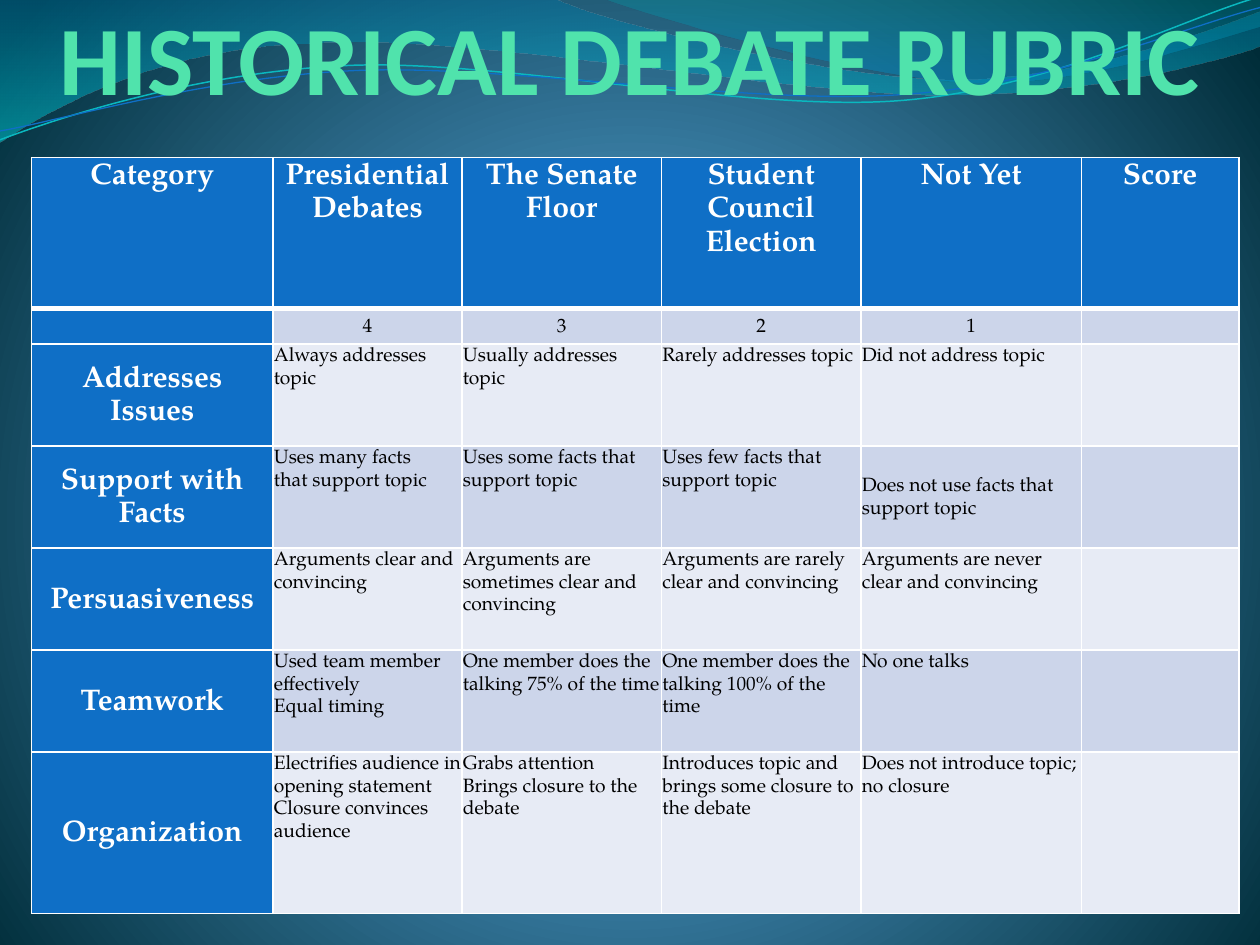
from copy import deepcopy

from lxml.etree import SubElement
from pptx import Presentation
from pptx.dml.color import RGBColor
from pptx.enum.text import MSO_ANCHOR, PP_ALIGN
from pptx.oxml import parse_xml
from pptx.oxml.ns import nsdecls, qn
from pptx.util import Inches, Pt

WHITE = RGBColor(0xFF, 0xFF, 0xFF)
BLACK = RGBColor(0x00, 0x00, 0x00)
BLUE = RGBColor(0x0F, 0x6F, 0xC6)
TEAL = RGBColor(0x0A, 0xB8, 0xBF)
MINT = RGBColor(0x50, 0xE3, 0xAC)
DARK_BAND = RGBColor(0xCC, 0xD5, 0xEA)
LIGHT_BAND = RGBColor(0xE7, 0xEB, 0xF5)

TITLE_FORMAT = {"name": "Calibri", "size": Pt(56), "bold": True}
HEADING_FORMAT = {"name": "TeX Gyre Pagella", "size": Pt(17), "bold": True}
BODY_FORMAT = {"name": "TeX Gyre Pagella", "size": Pt(11), "bold": False}

BACKGROUND_STOPS = [(0, "4AA0D6", 100), (25, "4C98C7", 100), (100, "002C38", 100)]
BACKGROUND_SHADE = (
    '<a:path path="circle"><a:fillToRect l="10000" t="110000" r="10000" b="100000"/></a:path>'
)
WAVE_SHADE = '<a:lin ang="5400000" scaled="1"/>'

WAVES = [
    (
        [(0, "0074A1", 45), (100, "00C6CF", 55)],
        (0, 0),
        [
            [(4.4, -0.01)],
            [(4.76, 0.17), (6.64, 0.63), (7.58, 0.63)],
            [(8.53, 0.63), (9.58, 0.26), (10, 0.09)],
            [(10.01, 0.36)],
            [(9.83, 0.44), (8.7, 0.76), (7.46, 0.75)],
            [(6.22, 0.75), (3.82, 0.28), (2.57, 0.34)],
            [(1.29, 0.36), (0.46, 0.83), (-0.01, 1.13)],
        ],
    ),
    (
        [(0, "00A1A9", 30), (80, "008BBF", 45)],
        (4.79, -0.01),
        [
            [(5.09, 0.11), (6.82, 0.62), (7.69, 0.65)],
            [(8.56, 0.69), (9.61, 0.32), (10, 0.21)],
            [(10, 0)],
        ],
    ),
]
STRANDS = [
    (
        TEAL,
        0.85,
        (0, 1.11),
        [
            [(0.48, 0.93), (1.58, 0.57), (2.77, 0.52)],
            [(3.95, 0.47), (5.93, 0.89), (7.13, 0.8)],
            [(8.33, 0.71), (9.38, 0.15), (9.98, -0.02)],
        ],
    ),
    (
        BLUE,
        0.75,
        (0, 1.04),
        [
            [(0.47, 0.96), (1.64, 0.61), (2.83, 0.56)],
            [(4.03, 0.51), (5.97, 0.84), (7.17, 0.75)],
            [(8.36, 0.67), (9.41, 0.21), (10, 0.06)],
        ],
    ),
]

COLUMN_TWELFTHS = [23, 18, 19, 19, 21, 15]
ROW_HEIGHTS = [1.2, 0.28, 0.81, 0.81, 0.81, 0.81, 1.28]
RUBRIC = [
    ["Category", "Presidential Debates", "The Senate Floor", "Student Council Election", "Not Yet", "Score"],
    ["", "4", "3", "2", "1", ""],
    ["Addresses\vIssues", "Always addresses \vtopic", "Usually addresses topic",
     "Rarely addresses topic", "Did not address topic", ""],
    ["Support with Facts", "Uses many facts\vthat support topic", "Uses some facts that support topic",
     "Uses few facts that support topic", "Does not use facts that support topic", ""],
    ["Persuasiveness", "Arguments clear and convincing", "Arguments are sometimes clear and convincing",
     "Arguments are rarely clear and convincing", "Arguments are never clear and convincing", ""],
    ["Teamwork", "Used team member effectively\nEqual timing", "One member does the talking 75% of the time",
     "One member does the talking 100% of the time", "No one talks", ""],
    ["Organization", "Electrifies audience in opening statement\vClosure convinces audience",
     "Grabs attention\nBrings closure to the debate",
     "Introduces topic and brings some closure to the debate",
     "Does not introduce topic; no closure", ""],
]
CENTERED_BODY_CELL = (3, 4)


def gradient(stops, shade):
    stop_xml = "".join(
        f'<a:gs pos="{position * 1000}"><a:srgbClr val="{color}">'
        f'<a:alpha val="{opacity * 1000}"/></a:srgbClr></a:gs>'
        for position, color, opacity in stops
    )
    return parse_xml(f'<a:gradFill {nsdecls("a")} rotWithShape="1"><a:gsLst>{stop_xml}</a:gsLst>{shade}</a:gradFill>')


def replace_gradient(parent, stops, shade):
    old = parent.find(qn("a:gradFill"))
    parent.replace(old, gradient(stops, shade))


def paint_background(slide):
    slide.background.fill.gradient()
    properties = next(slide.element.iter(qn("p:bgPr")))
    replace_gradient(properties, BACKGROUND_STOPS, BACKGROUND_SHADE)


def add_outline(slide, start, segments, close):
    builder = slide.shapes.build_freeform(Inches(start[0]), Inches(start[1]))
    ends = [(Inches(x), Inches(y)) for x, y in (segment[-1] for segment in segments)]
    builder.add_line_segments(ends, close=close)
    shape = builder.convert_to_shape()
    shape.shadow.inherit = False
    lines = list(shape.element.iter(qn("a:lnTo")))
    for line, segment in zip(lines, segments):
        if len(segment) == 3:
            curve = SubElement(line.getparent(), qn("a:cubicBezTo"))
            for x, y in segment:
                SubElement(curve, qn("a:pt"), x=str(Inches(x) - shape.left), y=str(Inches(y) - shape.top))
            line.getparent().replace(line, curve)
    return shape


def add_wave(slide, stops, start, segments):
    shape = add_outline(slide, start, segments, True)
    shape.line.fill.background()
    shape.fill.gradient()
    replace_gradient(shape.element.spPr, stops, WAVE_SHADE)


def add_strand(slide, color, width, start, segments):
    shape = add_outline(slide, start, segments, False)
    shape.fill.background()
    shape.line.color.rgb = color
    shape.line.width = Pt(width)


def format_run(run, formats, color):
    for name, value in formats.items():
        setattr(run.font, name, value)
    run.font.color.rgb = color


def add_title(slide):
    box = slide.shapes.add_textbox(0, 0, Inches(10), Inches(0.91))
    frame = box.text_frame
    frame_format = {"word_wrap": True, "vertical_anchor": MSO_ANCHOR.BOTTOM}
    frame_format.update({f"margin_{side}": 0 for side in ("left", "top", "right", "bottom")})
    for name, value in frame_format.items():
        setattr(frame, name, value)
    paragraph = frame.paragraphs[0]
    paragraph.alignment = PP_ALIGN.CENTER
    run = paragraph.add_run()
    run.text = "HISTORICAL DEBATE RUBRIC"
    format_run(run, TITLE_FORMAT, MINT)


def set_borders(cell, row):
    widths = {"L": 1, "R": 1, "T": 3 if row == 1 else 1, "B": 3 if row == 0 else 1}
    properties = cell._tc.get_or_add_tcPr()
    for side, width in widths.items():
        properties.append(parse_xml(
            f'<a:ln{side} {nsdecls("a")} w="{Pt(width)}"><a:solidFill>'
            f'<a:srgbClr val="{WHITE}"/></a:solidFill></a:ln{side}>'
        ))


def fill_cell(cell, text, row, column):
    heading = row == 0 or column == 0
    centered = heading or row == 1
    middle = row > 0 and (centered or (row, column) == CENTERED_BODY_CELL)
    set_borders(cell, row)
    cell.fill.solid()
    cell.fill.fore_color.rgb = BLUE if heading else DARK_BAND if row % 2 else LIGHT_BAND
    cell.vertical_anchor = MSO_ANCHOR.MIDDLE if middle else MSO_ANCHOR.TOP
    for side in ("left", "top", "right", "bottom"):
        setattr(cell, f"margin_{side}", Pt(0.5))
    cell.text_frame.text = text
    for index, paragraph in enumerate(cell.text_frame.paragraphs):
        paragraph.alignment = PP_ALIGN.CENTER if centered else PP_ALIGN.LEFT
        if not text:
            SubElement(paragraph._p, qn("a:endParaRPr"), sz="1100")
            continue
        spaced = heading or index > 0 or (row == 1 and column > 1)
        paragraph.line_spacing = 1.15
        paragraph.space_after = Pt(10 if spaced else 0)
        for run in paragraph.runs:
            format_run(run, HEADING_FORMAT if heading else BODY_FORMAT, WHITE if heading else BLACK)
        for line_break in paragraph._p.findall(qn("a:br")):
            line_break.append(deepcopy(paragraph.runs[0]._r.rPr))


def add_rubric(slide):
    frame = slide.shapes.add_table(
        len(ROW_HEIGHTS), len(COLUMN_TWELFTHS), Inches(0.25), Inches(1.25), Inches(9.58), Inches(6)
    )
    table = frame.table
    for column, twelfths in zip(table.columns, COLUMN_TWELFTHS):
        column.width = Inches(twelfths / 12)
    for row, height in zip(table.rows, ROW_HEIGHTS):
        row.height = Inches(height)
    for row, texts in enumerate(RUBRIC):
        for column, text in enumerate(texts):
            fill_cell(table.cell(row, column), text, row, column)


def main():
    presentation = Presentation()
    presentation.slide_width = Inches(10)
    presentation.slide_height = Inches(7.5)
    slide = presentation.slides.add_slide(presentation.slide_layouts[6])
    paint_background(slide)
    for wave in WAVES:
        add_wave(slide, *wave)
    for strand in STRANDS:
        add_strand(slide, *strand)
    add_title(slide)
    add_rubric(slide)
    presentation.save("out.pptx")


if __name__ == "__main__":
    main()
